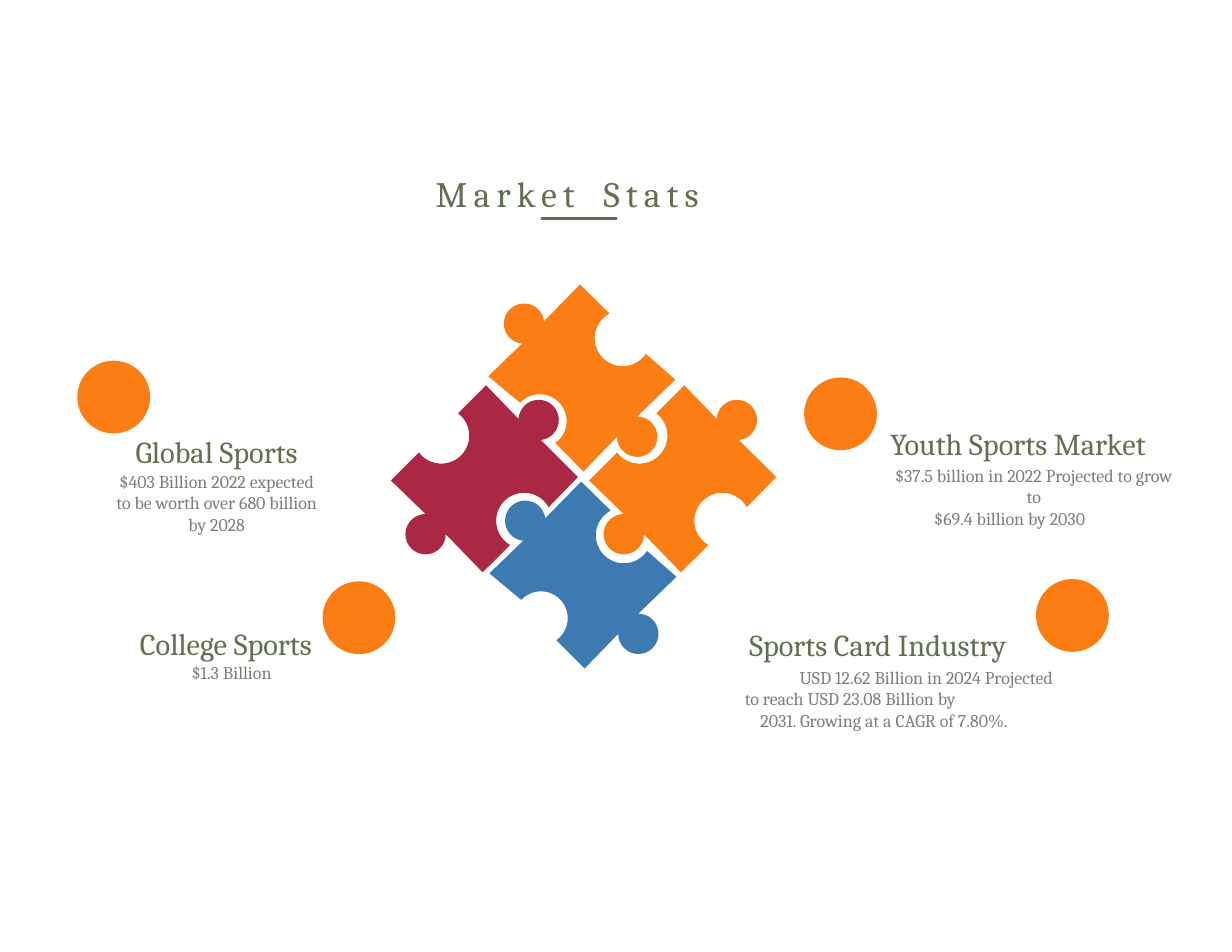
from math import cos, radians, sin

from lxml import etree
from pptx import Presentation
from pptx.dml.color import RGBColor
from pptx.enum.shapes import MSO_CONNECTOR, MSO_SHAPE
from pptx.enum.text import MSO_ANCHOR, MSO_AUTO_SIZE, PP_ALIGN
from pptx.oxml.ns import qn
from pptx.util import Inches, Pt

GREEN = RGBColor(0x62, 0x6F, 0x51)
GREY = RGBColor(0x7E, 0x7E, 0x7E)
ORANGE = RGBColor(0xFC, 0x7D, 0x13)
MAROON = RGBColor(0xAB, 0x28, 0x44)
BLUE = RGBColor(0x3D, 0x7A, 0xB1)
FONT = "Cambria"

HEADING = dict(size=19.5, color=GREEN)
DETAIL = dict(size=11.5, color=GREY)
CENTER = dict(align=PP_ALIGN.CENTER)

# Each block: box (left, top, width, height), top inset, paragraphs
MARKETS = [
    ((6.64, 5.51, 2.85, 1.03), 0.08, [
        ("Sports Card Industry", dict(HEADING, left=0.05)),
        ("USD 12.62 Billion in 2024 Projected to reach USD 23.08 Billion by",
         dict(DETAIL, left=0.01, first=0.49, before=2.7)),
        ("2031. Growing at a CAGR of 7.80%.", dict(DETAIL, left=0.15, before=0.1)),
    ]),
    ((7.51, 3.75, 3.01, 0.8), 0.05, [
        ("Youth Sports Market", dict(HEADING, left=0.44)),
        ("$37.5 billion in 2022 Projected to grow to",
         dict(DETAIL, **CENTER, left=0.43, before=1.6)),
        ("$69.4 billion by 2030", dict(DETAIL, **CENTER, before=0.1)),
    ]),
    ((1.01, 3.85, 1.85, 0.94), 0.02, [
        ("Global Sports", dict(HEADING, **CENTER)),
        ("$403 Billion 2022 expected to be worth over 680 billion by 2028",
         dict(DETAIL, **CENTER, before=0.5)),
    ]),
    ((1.24, 5.56, 1.64, 0.55), 0.02, [
        ("College Sports", dict(HEADING, left=0.01, line=23.4)),
        ("$1.3 Billion", dict(DETAIL, left=0.47, line=13.8)),
    ]),
]

DOT_SIZE = 0.65
DOTS = [(0.69, 3.22), (7.18, 3.37), (2.88, 5.19), (9.25, 5.17)]

# Outlines in inches: a corner is (x, y),
# a knob or socket is (centre x, centre y, radius, start angle, end angle)
SIDE_PIECE = [
    (1.67, 0.82), (1.32, 0.31, 0.18, 84, -177),
    (0.85, 0), (0.45, 0.45, 0.25, -53, 143),
    (0, 0.85), (0.31, 1.33, 0.18, -90, -360),
    (0.82, 1.67), (1.19, 1.21, 0.25, 120, 331),
]
UPRIGHT_PIECE = [
    (1.67, 0.85), (1.2, 0.48, 0.25, 34, 242),
    (0.82, 0), (0.32, 0.35, 0.18, -7, -264),
    (0, 0.82), (0.46, 1.22, 0.24, 223, 415),
    (0.85, 1.67), (1.33, 1.36, 0.18, 180, -90),
]
PIECES = [
    (SIDE_PIECE, 3.49, 3.44, MAROON),
    (UPRIGHT_PIECE, 4.36, 2.54, ORANGE),
    (UPRIGHT_PIECE, 4.37, 4.3, BLUE),
    (SIDE_PIECE, 5.26, 3.44, ORANGE),
]
ARC_STEPS = 24


def prepare_frame(frame, top_inset):
    frame.margin_left = frame.margin_right = frame.margin_bottom = 0
    frame.margin_top = Inches(top_inset)
    frame.word_wrap = True
    frame.auto_size = MSO_AUTO_SIZE.NONE
    frame.vertical_anchor = MSO_ANCHOR.TOP


def write(paragraph, text, *, size, color, align=PP_ALIGN.LEFT, left=0, first=0,
          before=0, line=None, spacing=None, tab=None):
    """Fill a paragraph; left, first and tab are in inches, the rest in points."""
    properties = paragraph._p.get_or_add_pPr()
    properties.set("marL", str(Inches(left)))
    properties.set("indent", str(Inches(first)))
    if tab:
        tabs = etree.SubElement(properties, qn("a:tabLst"))
        etree.SubElement(tabs, qn("a:tab"), pos=str(Inches(tab)), algn="l")
    paragraph.alignment = align
    paragraph.space_before = Pt(before)
    if line:
        paragraph.line_spacing = Pt(line)
    run = paragraph.add_run()
    run.text = text
    run.font.name = FONT
    run.font.size = Pt(size)
    run.font.color.rgb = color
    if spacing:
        run._r.get_or_add_rPr().set("spc", str(round(spacing * 100)))


def paint(shape, color):
    shape.shadow.inherit = False
    shape.fill.solid()
    shape.fill.fore_color.rgb = color
    shape.line.fill.background()


def outline_points(outline, left, top):
    """Turn corners and arcs into slide coordinates."""
    for x, y, *arc in outline:
        if not arc:
            yield Inches(left + x), Inches(top + y)
            continue
        radius, start, end = arc
        for step in range(ARC_STEPS + 1):
            angle = radians(start + (end - start) * step / ARC_STEPS)
            yield (Inches(left + x + radius * cos(angle)),
                   Inches(top + y + radius * sin(angle)))


def main():
    prs = Presentation()
    prs.slide_width, prs.slide_height = Inches(11), Inches(8.5)
    slide = prs.slides.add_slide(prs.slide_layouts[5])
    shapes = slide.shapes

    title = shapes.title
    title.left, title.top = Inches(3.88), Inches(1.51)
    title.width, title.height = Inches(2.66), Inches(0.41)
    prepare_frame(title.text_frame, 0.02)
    write(title.text_frame.paragraphs[0], "Market\tStats", size=23, color=GREEN,
          left=0.01, spacing=4, tab=1.6)

    underline = shapes.add_connector(MSO_CONNECTOR.STRAIGHT, Inches(4.83),
                                     Inches(1.95), Inches(5.51), Inches(1.95))
    underline.line.color.rgb = GREEN
    underline.line.width = Pt(2.27)
    etree.SubElement(underline._element.spPr, qn("a:effectLst"))

    for box, top_inset, paragraphs in MARKETS:
        frame = shapes.add_textbox(*map(Inches, box)).text_frame
        prepare_frame(frame, top_inset)
        for index, (text, style) in enumerate(paragraphs):
            paragraph = frame.add_paragraph() if index else frame.paragraphs[0]
            write(paragraph, text, **style)

    for left, top in DOTS:
        dot = shapes.add_shape(MSO_SHAPE.OVAL, Inches(left), Inches(top),
                               Inches(DOT_SIZE), Inches(DOT_SIZE))
        paint(dot, ORANGE)

    for outline, left, top, color in PIECES:
        start, *rest = outline_points(outline, left, top)
        builder = shapes.build_freeform(*start, scale=1.0)
        builder.add_line_segments(rest, close=True)
        paint(builder.convert_to_shape(), color)

    prs.save("out.pptx")


if __name__ == "__main__":
    main()
